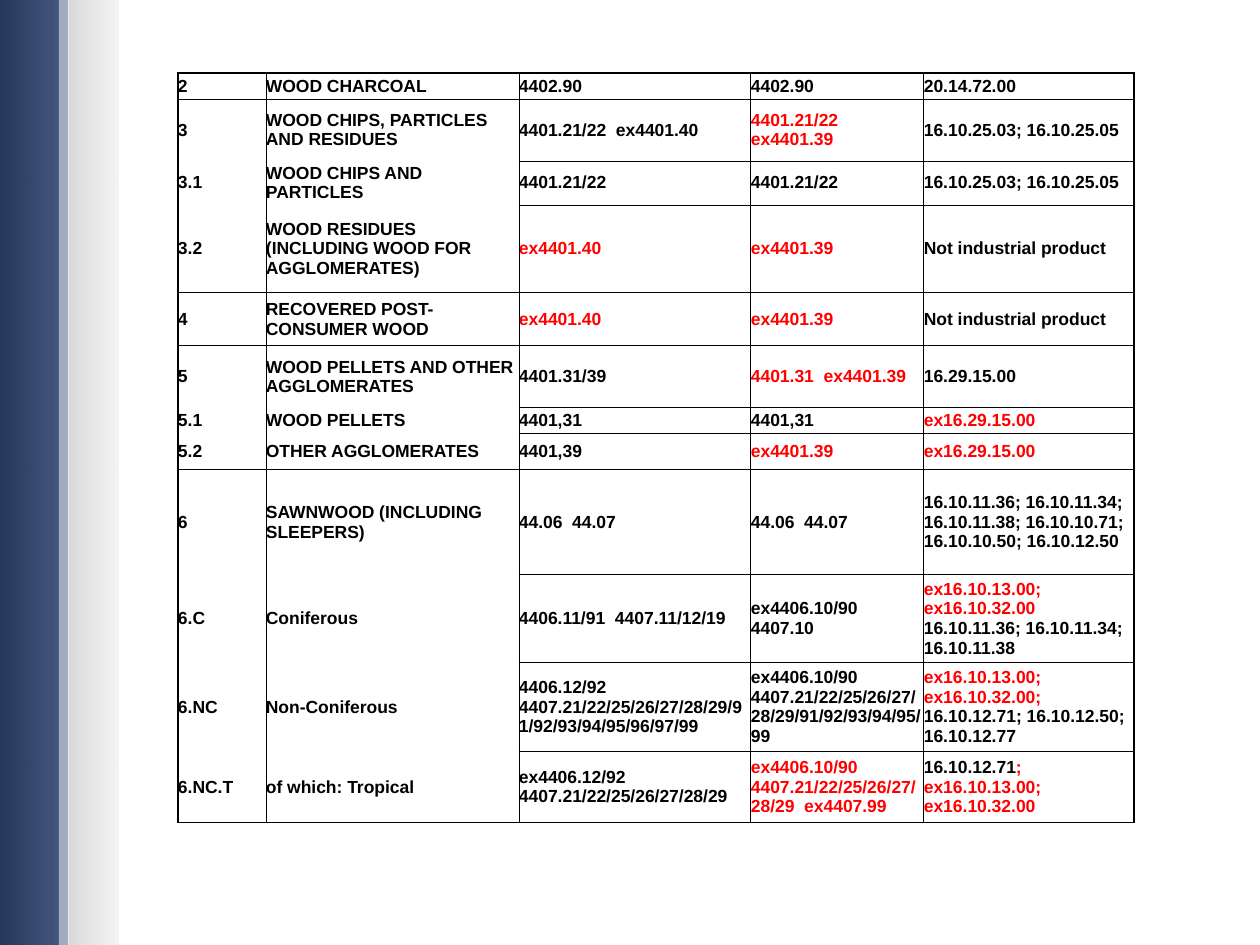
from lxml import etree
from pptx import Presentation
from pptx.dml.color import RGBColor
from pptx.enum import shapes, text
from pptx.oxml.ns import qn
from pptx.util import Pt

EMU_PER_PX = 914400 / 126
COLORS = {
    "text": "000000", "changed": "FF0000", "border": "000000",
    "navy": "26385C", "blue": "344974", "white": "FFFFFF",
    "light": "F2F2F2", "grey": "D9D9D9",
}


def px(n):
    return round(n * EMU_PER_PX)


def set_border(cell, side, width):
    """Draw one cell side (L, R, T or B); a width of 0 hides it."""
    ln = etree.SubElement(cell._tc.get_or_add_tcPr(), qn("a:ln" + side), w=str(Pt(width)))
    if width:
        fill = etree.SubElement(ln, qn("a:solidFill"))
        etree.SubElement(fill, qn("a:srgbClr"), val=COLORS["border"])
    else:
        etree.SubElement(ln, qn("a:noFill"))


prs = Presentation()
prs.slide_width, prs.slide_height = px(1260), px(945)
s = prs.slides.add_slide(prs.slide_layouts[6])

# Side bands: left, width, then (colour, opacity %) from right to left
bands = [
    (0, 69, [("blue", 90), ("navy", 100)]),
    (69, 50, [("light", 80), ("grey", 100)]),
    (59, 10, [("white", 50)]),
]
for left, width, stops in bands:
    sp = s.shapes.add_shape(shapes.MSO_SHAPE.RECTANGLE, px(left), 0, px(width), px(945))
    sp.shadow.inherit = False
    sp.line.fill.background()
    if len(stops) > 1:
        sp.fill.gradient()
        sp.fill.gradient_angle = 180
        targets = [stop.color for stop in sp.fill.gradient_stops]
    else:
        sp.fill.solid()
        targets = [sp.fill.fore_color]
    for target, (name, _) in zip(targets, stops):
        target.rgb = RGBColor.from_string(COLORS[name])
    for clr, (_, opacity) in zip(sp._element.spPr.iter(qn("a:srgbClr")), stops):
        etree.SubElement(clr, qn("a:alpha"), val=str(opacity * 1000))

# Text between bars is shown in the "changed" colour
rows = [
    (26, "2", "WOOD CHARCOAL", "4402.90", "4402.90", "20.14.72.00"),
    (62, "3", "WOOD CHIPS, PARTICLES AND RESIDUES", "4401.21/22  ex4401.40",
     "|4401.21/22  ex4401.39|", "16.10.25.03; 16.10.25.05"),
    (44, "3.1", "WOOD CHIPS AND PARTICLES", "4401.21/22", "4401.21/22",
     "16.10.25.03; 16.10.25.05"),
    (88, "3.2", "WOOD RESIDUES (INCLUDING WOOD FOR AGGLOMERATES)", "|ex4401.40|",
     "|ex4401.39|", "Not industrial product"),
    (53, "4", "RECOVERED POST-CONSUMER WOOD", "|ex4401.40|", "|ex4401.39|",
     "Not industrial product"),
    (62, "5", "WOOD PELLETS AND OTHER AGGLOMERATES", "4401.31/39",
     "|4401.31  ex4401.39|", "16.29.15.00"),
    (26, "5.1", "WOOD PELLETS", "4401,31", "4401,31", "|ex16.29.15.00|"),
    (36, "5.2", "OTHER AGGLOMERATES", "4401,39", "|ex4401.39|", "|ex16.29.15.00|"),
    (105, "6", "SAWNWOOD (INCLUDING SLEEPERS)", "44.06  44.07", "44.06  44.07",
     "16.10.11.36; 16.10.11.34; 16.10.11.38; 16.10.10.71; 16.10.10.50; 16.10.12.50"),
    (88, "6.C", "Coniferous", "4406.11/91  4407.11/12/19", "ex4406.10/90  4407.10",
     "|ex16.10.13.00; ex16.10.32.00 |16.10.11.36; 16.10.11.34; 16.10.11.38"),
    (89, "6.NC", "Non-Coniferous",
     "4406.12/92  4407.21/22/25/26/27/28/29/91/92/93/94/95/96/97/99",
     "ex4406.10/90  4407.21/22/25/26/27/28/29/91/92/93/94/95/99",
     "|ex16.10.13.00; ex16.10.32.00;| 16.10.12.71; 16.10.12.50; 16.10.12.77"),
    (71, "6.NC.T", "of which: Tropical", "ex4406.12/92  4407.21/22/25/26/27/28/29",
     "|ex4406.10/90  4407.21/22/25/26/27/28/29  ex4407.99|",
     "16.10.12.71|; ex16.10.13.00; ex16.10.32.00|"),
]
col_widths = [88, 253, 232, 173, 210]
last_row, last_col = len(rows) - 1, len(col_widths) - 1

table = s.shapes.add_table(len(rows), len(col_widths), px(178), px(73),
                           px(sum(col_widths)), px(sum(row[0] for row in rows))).table
table.first_row = table.horz_banding = False
for column, width in zip(table.columns, col_widths):
    column.width = px(width)

for i, (height, *contents) in enumerate(rows):
    table.rows[i].height = px(height)
    # Code and product columns have no rule inside a product group
    starts_group = "." not in contents[0]
    ends_group = i == last_row or "." not in rows[i + 1][1]
    for j, content in enumerate(contents):
        cell = table.cell(i, j)
        cell.margin_left = cell.margin_right = cell.margin_top = cell.margin_bottom = 0
        cell.vertical_anchor = text.MSO_ANCHOR.MIDDLE
        set_border(cell, "L", 1 if j == 0 else 0.5)
        set_border(cell, "R", 1 if j == last_col else 0.5)
        set_border(cell, "T", 1 if i == 0 else 0.5 if j > 1 or starts_group else 0)
        set_border(cell, "B", 1 if i == last_row else 0.5 if j > 1 or ends_group else 0)
        cell.fill.background()
        p = cell.text_frame.paragraphs[0]
        for k, part in enumerate(content.split("|")):
            if part:
                r = p.add_run()
                r.text = part
                r.font.name, r.font.size, r.font.bold = "Arial", Pt(10), True
                r.font.color.rgb = RGBColor.from_string(COLORS["changed" if k % 2 else "text"])

prs.save("out.pptx")
